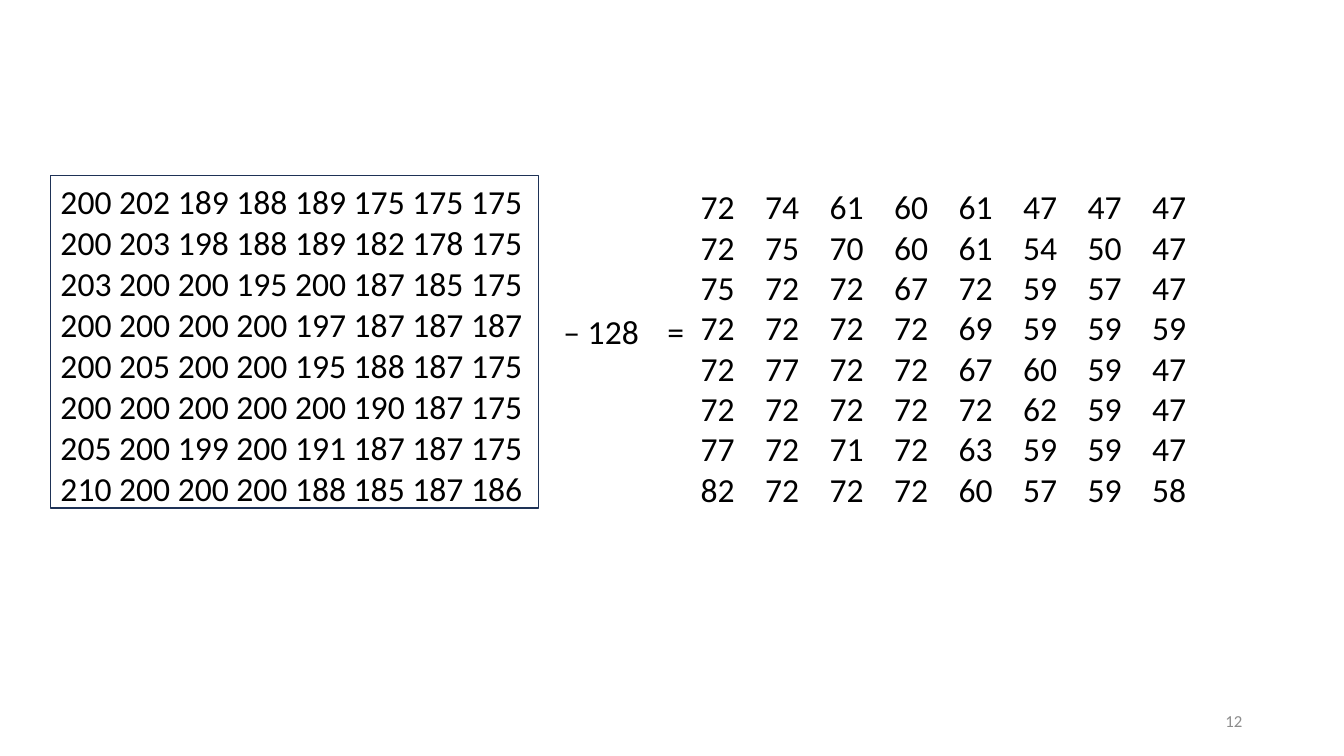
from dataclasses import dataclass

from lxml import etree
from pptx import Presentation
from pptx.dml.color import RGBColor
from pptx.enum.shapes import MSO_SHAPE
from pptx.enum.text import MSO_ANCHOR, PP_ALIGN
from pptx.oxml.ns import qn
from pptx.util import Inches, Pt

RECTANGLE = MSO_SHAPE.RECTANGLE
MIDDLE, TOP = MSO_ANCHOR.MIDDLE, MSO_ANCHOR.TOP
LEFT, RIGHT = PP_ALIGN.LEFT, PP_ALIGN.RIGHT
BLANK_LAYOUT = 6


@dataclass(frozen=True)
class Theme:
    font: str = "Calibri"
    ink: RGBColor = RGBColor(0x00, 0x00, 0x00)
    muted: RGBColor = RGBColor(0x8C, 0x8C, 0x8C)
    frame: RGBColor = RGBColor(0x1E, 0x32, 0x56)
    body_size: int = 24
    number_size: int = 12
    frame_width: int = 1


THEME = Theme()
LEVEL_SHIFT = 128
PIXELS = [
    [200, 202, 189, 188, 189, 175, 175, 175],
    [200, 203, 198, 188, 189, 182, 178, 175],
    [203, 200, 200, 195, 200, 187, 185, 175],
    [200, 200, 200, 200, 197, 187, 187, 187],
    [200, 205, 200, 200, 195, 188, 187, 175],
    [200, 200, 200, 200, 200, 190, 187, 175],
    [205, 200, 199, 200, 191, 187, 187, 175],
    [210, 200, 200, 200, 188, 185, 187, 186],
]


def add_tab_stops(para, count, pitch):
    tab_list = etree.SubElement(para._p.get_or_add_pPr(), qn("a:tabLst"))
    for index in range(1, count + 1):
        etree.SubElement(tab_list, qn("a:tab"), pos=str(Inches(pitch * index)), algn="l")


def write_text(frame, lines, size=THEME.body_size, color=THEME.ink, align=LEFT,
               spacing=None, tab_pitch=None):
    """Write one paragraph per line; tab_pitch is the column step in inches."""
    frame.word_wrap = True
    for index, line in enumerate(lines):
        para = frame.add_paragraph() if index else frame.paragraphs[0]
        para.alignment = align
        if spacing:
            para.line_spacing = Pt(spacing)
        if tab_pitch:
            add_tab_stops(para, line.count("\t"), tab_pitch)
        span = para.add_run()
        span.text = line
        span.font.name = THEME.font
        span.font.size = Pt(size)
        span.font.color.rgb = color


def add_text(page, box, lines, anchor=TOP, **text_format):
    frame = page.shapes.add_textbox(*map(Inches, box)).text_frame
    frame.vertical_anchor = anchor
    write_text(frame, lines, **text_format)


def add_pixel_block(page, box):
    """Single-cell table of pixel values with a thin frame around it."""
    left, top, width, height = box
    table = page.shapes.add_table(
        1, 1, *map(Inches, (left, top + 0.02, width, height))).table
    table.first_row = table.horz_banding = False
    cell = table.cell(0, 0)
    cell.fill.background()
    write_text(cell.text_frame, [" ".join(map(str, row)) for row in PIXELS])

    outline = page.shapes.add_shape(RECTANGLE, *map(Inches, box))
    outline.shadow.inherit = False
    outline.fill.background()
    outline.line.color.rgb = THEME.frame
    outline.line.width = Pt(THEME.frame_width)


def add_operators(page, box):
    left, top, width, height = box
    equals_width = 0.52
    shift_width = width - equals_width
    add_text(page, (left, top, shift_width, height), [f"– {LEVEL_SHIFT}"])
    add_text(page, (left + shift_width, top, equals_width, height), ["="])


def add_shifted_block(page, box):
    rows = ["\t".join(str(value - LEVEL_SHIFT) for value in row) for row in PIXELS]
    add_text(page, box, rows, spacing=28.8, tab_pitch=0.64)


def add_page_number(page, box, number):
    add_text(page, box, [str(number)], anchor=MIDDLE, align=RIGHT,
             size=THEME.number_size, color=THEME.muted)


def main():
    deck = Presentation()
    deck.slide_width, deck.slide_height = Inches(13.33), Inches(7.5)
    page = deck.slides.add_slide(deck.slide_layouts[BLANK_LAYOUT])
    add_pixel_block(page, (0.5, 1.74, 4.84, 3.3))
    add_operators(page, (5.49, 3.04, 1.55, 0.5))
    add_shifted_block(page, (6.85, 1.8, 5.33, 3.3))
    add_page_number(page, (9.42, 6.95, 3, 0.4), 12)
    deck.save("out.pptx")


if __name__ == "__main__":
    main()
